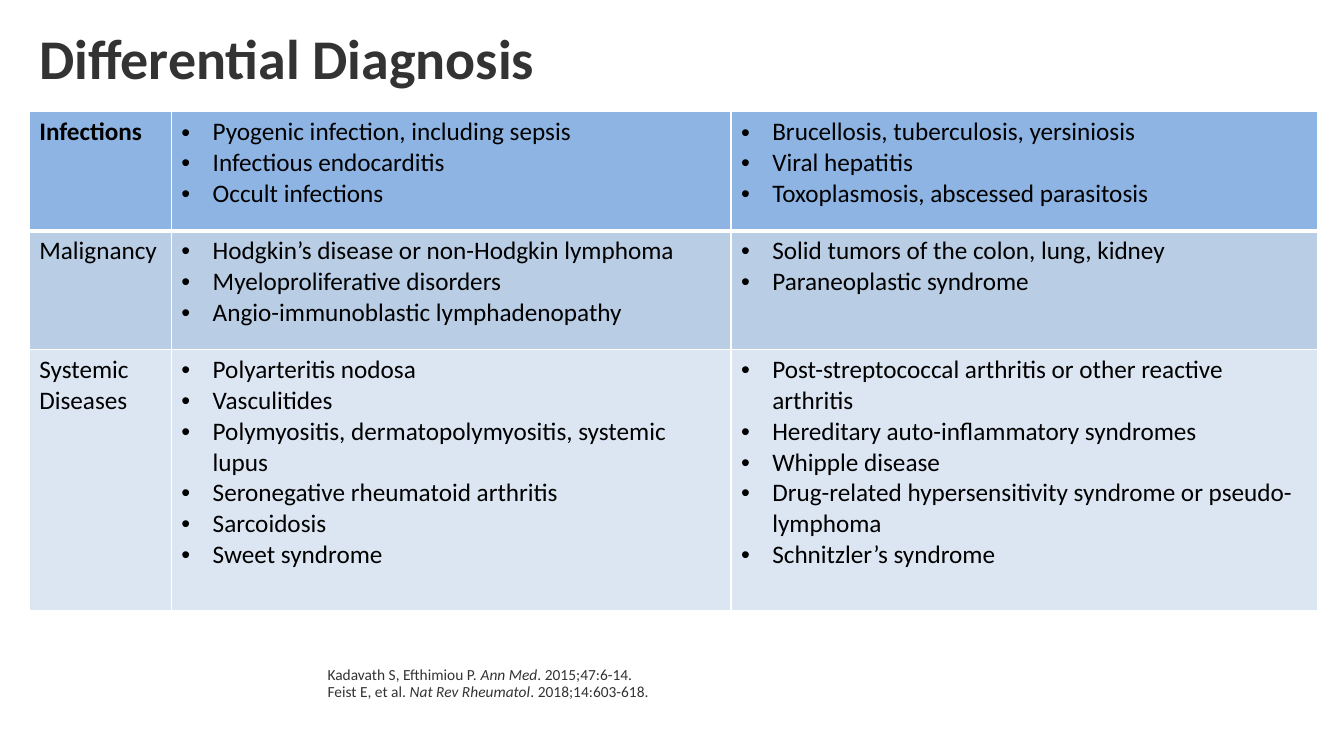
from lxml.etree import SubElement
from pptx import Presentation
from pptx.dml.color import RGBColor
from pptx.enum.text import MSO_ANCHOR
from pptx.oxml.ns import qn
from pptx.util import Inches, Pt

FONT = "Calibri"
COLORS = {"heading": "333333", "text": "000000", "border": "FFFFFF"}
TITLE = "Differential Diagnosis"
# category, row fill, row height, left bullets, right bullets
DIAGNOSES = [
    ("Infections", "8EB4E3", 1.18,
     ["Pyogenic infection, including sepsis", "Infectious endocarditis",
      "Occult infections"],
     ["Brucellosis, tuberculosis, yersiniosis", "Viral hepatitis",
      "Toxoplasmosis, abscessed parasitosis"]),
    ("Malignancy", "B9CDE5", 1.18,
     ["Hodgkin’s disease or non-Hodgkin lymphoma", "Myeloproliferative disorders",
      "Angio-immunoblastic lymphadenopathy"],
     ["Solid tumors of the colon, lung, kidney", "Paraneoplastic syndrome"]),
    ("Systemic Diseases", "DCE6F2", 2.59,
     ["Polyarteritis nodosa", "Vasculitides",
      "Polymyositis, dermatopolymyositis, systemic lupus",
      "Seronegative rheumatoid arthritis", "Sarcoidosis", "Sweet syndrome"],
     ["Post-streptococcal arthritis or other reactive arthritis",
      "Hereditary auto-inflammatory syndromes", "Whipple disease",
      "Drug-related hypersensitivity syndrome or pseudo-lymphoma",
      "Schnitzler’s syndrome"]),
]
COLUMN_WIDTHS = [1.41, 5.55, 5.82]
# authors, journal, issue
REFERENCES = [
    ("Kadavath S, Efthimiou P. ", "Ann Med", ". 2015;47:6-14."),
    ("Feist E, et al. ", "Nat Rev Rheumatol", ". 2018;14:603-618."),
]


def add_run(p, text, size=18, color="text", bold=False, italic=False):
    r = p.add_run()
    r.text = text
    r.font.name, r.font.size = FONT, Pt(size)
    r.font.bold, r.font.italic = bold, italic
    r.font.color.rgb = RGBColor.from_string(COLORS[color])


def add_textbox(slide, box, lines, anchor=MSO_ANCHOR.TOP, **fmt):
    """Each line is a sequence of texts; every second text is italic."""
    tf = slide.shapes.add_textbox(*map(Inches, box)).text_frame
    tf.word_wrap = True
    tf.vertical_anchor = anchor
    for i, line in enumerate(lines):
        p = tf.paragraphs[0] if i == 0 else tf.add_paragraph()
        p.line_spacing = 0.9
        for j, text in enumerate(line):
            add_run(p, text, italic=j % 2 == 1, **fmt)


def set_borders(cell, **widths):
    tcPr = cell._tc.get_or_add_tcPr()
    for side in "LRTB":
        ln = SubElement(tcPr, qn(f"a:ln{side}"), w=str(Pt(widths.get(side, 1))))
        fill = SubElement(ln, qn("a:solidFill"))
        SubElement(fill, qn("a:srgbClr"), val=COLORS["border"])


def fill_cell(cell, lines, fill, bulleted=False, bold=False, **borders):
    set_borders(cell, **borders)
    cell.fill.solid()
    cell.fill.fore_color.rgb = RGBColor.from_string(fill)
    tf = cell.text_frame
    for i, line in enumerate(lines):
        p = tf.paragraphs[0] if i == 0 else tf.add_paragraph()
        if bulleted:
            pPr = p._p.get_or_add_pPr()
            pPr.set("marL", str(Inches(0.31)))
            pPr.set("indent", str(-Inches(0.31)))
            SubElement(pPr, qn("a:buFont"), typeface="Arial")
            SubElement(pPr, qn("a:buChar"), char="•")
        add_run(p, line, bold=bold)


def add_diagnosis_table(slide, left, top):
    width, height = sum(COLUMN_WIDTHS), sum(row[2] for row in DIAGNOSES)
    table = slide.shapes.add_table(
        len(DIAGNOSES), len(COLUMN_WIDTHS),
        *map(Inches, (left, top, width, height))).table
    for column, column_width in zip(table.columns, COLUMN_WIDTHS):
        column.width = Inches(column_width)
    for i, (category, fill, row_height, *bullets) in enumerate(DIAGNOSES):
        table.rows[i].height = Inches(row_height)
        borders = {0: {"B": 3}, 1: {"T": 3}}.get(i, {})
        fill_cell(table.cell(i, 0), [category], fill, bold=i == 0, **borders)
        for j, lines in enumerate(bullets, start=1):
            fill_cell(table.cell(i, j), lines, fill, bulleted=True, **borders)


def main():
    prs = Presentation()
    prs.slide_width, prs.slide_height = Inches(13.33), Inches(7.5)
    slide = prs.slides.add_slide(prs.slide_layouts[6])
    add_textbox(slide, (0.29, 0.19, 12.78, 0.83), [[TITLE]],
                anchor=MSO_ANCHOR.MIDDLE, size=40, color="heading", bold=True)
    add_diagnosis_table(slide, 0.29, 1.11)
    add_textbox(slide, (3.15, 6.57, 10.18, 0.8), REFERENCES,
                size=11, color="heading")
    prs.save("out.pptx")


if __name__ == "__main__":
    main()
